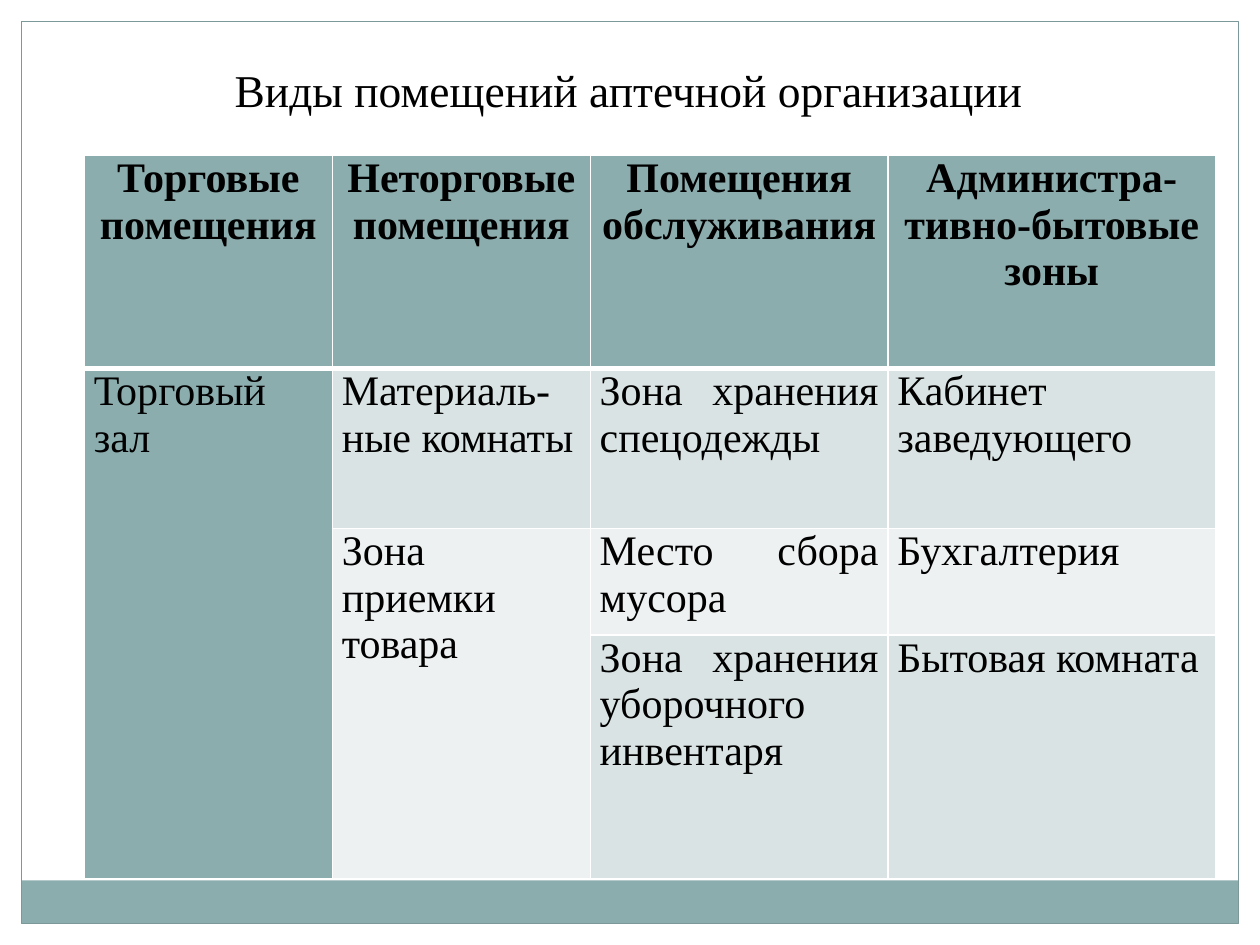
from lxml import etree
from pptx import Presentation
from pptx import util as u
from pptx.dml.color import RGBColor
from pptx.enum import shapes, text
from pptx.oxml.ns import qn

TEAL, FRAME, WHITE, BLACK = "8CADAE", "7C999A", "FFFFFF", "000000"
BANDS = ["DAE3E3", "EEF1F2"]
WIDTH, HEIGHT, EDGE = 25.4, 19.05, 0.43

HEADERS = ["Торговые помещения", "Неторговые помещения",
           "Помещения обслуживания", "Администра-тивно-бытовые зоны"]
ROOMS = [
    ["Торговый зал", "Материаль-ные комнаты", "Зона хранения спецодежды", "Кабинет заведующего"],
    ["", "Зона приемки товара", "Место сбора мусора", "Бухгалтерия"],
    ["", "", "Зона хранения уборочного инвентаря", "Бытовая комната"],
]
COL_WIDTHS = [5, 5.2, 6, 6.6]
ROW_HEIGHTS = [4.3, 3.22, 2.15, 4.92]
MERGES = [((1, 0), (3, 0)), ((2, 1), (3, 1))]


def color(value):
    return RGBColor.from_string(value)


class SlideBuilder:
    """Holds the text style and the slide being filled."""

    def __init__(self, prs, font="Times New Roman"):
        self.s = prs.slides.add_slide(prs.slide_layouts[5])
        self.font = font

    def run(self, p, content, size, bold=False):
        r = p.add_run()
        r.text = content
        r.font.name, r.font.size, r.font.bold = self.font, u.Pt(size), bold
        r.font.color.rgb = color(BLACK)

    def title(self, content, x, y, w, h):
        sp = self.s.shapes.title
        sp.left, sp.top, sp.width, sp.height = map(u.Cm, (x, y, w, h))
        tf = sp.text_frame
        tf.word_wrap = True
        tf.vertical_anchor = text.MSO_ANCHOR.TOP
        p = tf.paragraphs[0]
        p.alignment = text.PP_ALIGN.CENTER
        self.run(p, content, 26)

    def rect(self, x, y, w, h, fill=None, line=None):
        sp = self.s.shapes.add_shape(shapes.MSO_SHAPE.RECTANGLE, *map(u.Cm, (x, y, w, h)))
        sp.shadow.inherit = False
        if fill:
            sp.fill.solid()
            sp.fill.fore_color.rgb = color(fill)
        else:
            sp.fill.background()
        if line:
            sp.line.color.rgb = color(line)
            sp.line.width = u.Pt(0.75)
        else:
            sp.line.fill.background()

    def borders(self, cell, top, bottom):
        tc_pr = cell._tc.get_or_add_tcPr()
        for side, width in (("L", 1), ("R", 1), ("T", top), ("B", bottom)):
            ln = etree.SubElement(tc_pr, qn(f"a:ln{side}"), w=str(u.Pt(width)))
            fill = etree.SubElement(ln, qn("a:solidFill"))
            etree.SubElement(fill, qn("a:srgbClr"), val=WHITE)

    def cell(self, cell, content, fill, align, bold):
        cell.margin_left = cell.margin_right = u.Cm(0.19)
        cell.margin_top = cell.margin_bottom = 0
        cell.fill.solid()
        cell.fill.fore_color.rgb = color(fill)
        p = cell.text_frame.paragraphs[0]
        p.alignment = align
        if content:
            self.run(p, content, 24, bold)

    def table(self, rows, x, y, widths, heights, merges):
        """The first row is the header; the first column shares its fill."""
        frame = self.s.shapes.add_table(len(heights), len(widths), u.Cm(x), u.Cm(y),
                                        u.Cm(sum(widths)), u.Cm(sum(heights)))
        table = frame.table
        for column, width in zip(table.columns, widths):
            column.width = u.Cm(width)
        for row, height in zip(table.rows, heights):
            row.height = u.Cm(height)
        for i, row in enumerate(rows):
            header = i == 0
            align = text.PP_ALIGN.CENTER if header else text.PP_ALIGN.JUSTIFY
            for j, content in enumerate(row):
                cell = table.cell(i, j)
                fill = TEAL if header or j == 0 else BANDS[(i - 1) % 2]
                self.borders(cell, 3 if i == 1 else 1, 3 if header else 1)
                self.cell(cell, content, fill, align, header)
        for first, last in merges:
            table.cell(*first).merge(table.cell(*last))


def main():
    prs = Presentation()
    prs.slide_width, prs.slide_height = u.Cm(WIDTH), u.Cm(HEIGHT)
    slide = SlideBuilder(prs)
    slide.rect(0, 0, WIDTH, EDGE, fill=WHITE)
    for x in (WIDTH - EDGE, 0):
        slide.rect(x, 0, EDGE, HEIGHT, fill=WHITE)
    inner = WIDTH - 2 * EDGE
    slide.rect(EDGE, 17.75, inner, 0.87, fill=TEAL)
    slide.rect(EDGE, EDGE, inner, HEIGHT - 2 * EDGE, line=FRAME)
    slide.title("Виды помещений аптечной организации", 1.08, 1.12, 23.2, 3.58)
    slide.table([HEADERS] + ROOMS, 1.7, 3.13, COL_WIDTHS, ROW_HEIGHTS, MERGES)
    prs.save("out.pptx")


if __name__ == "__main__":
    main()
